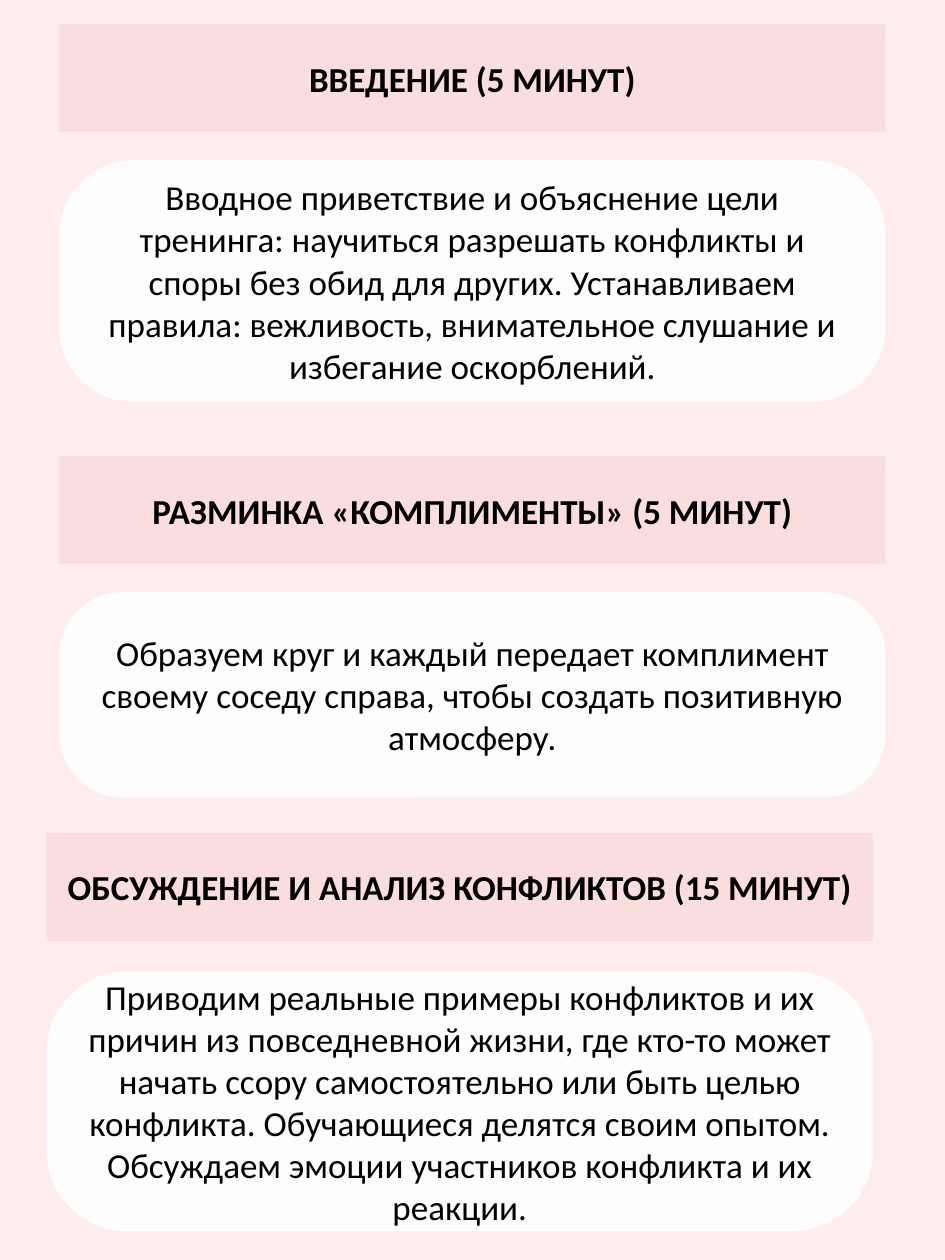
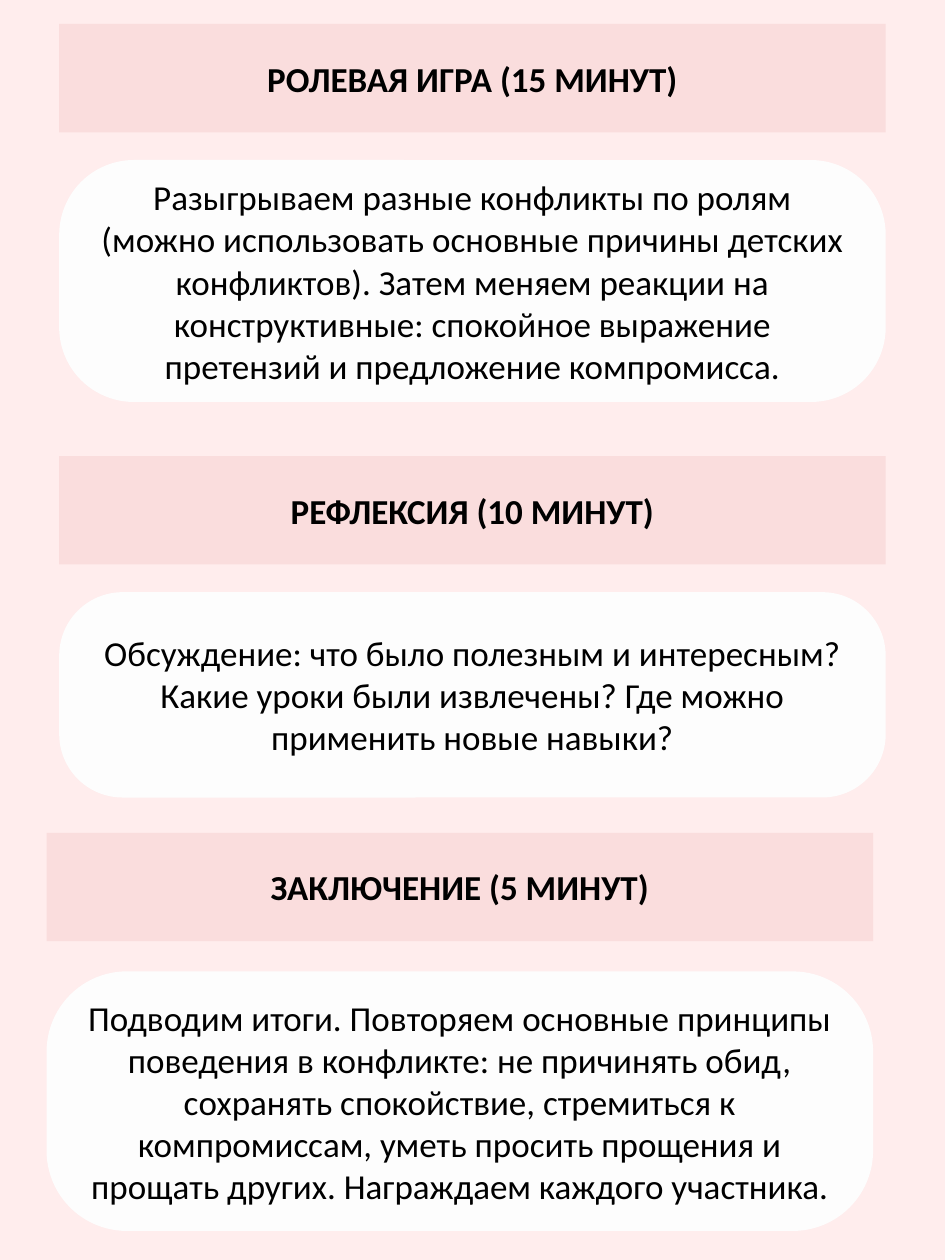
from dataclasses import dataclass

from pptx import Presentation
from pptx.dml.color import RGBColor as RGB
from pptx.enum.shapes import MSO_SHAPE as SHAPE
from pptx.enum.text import MSO_ANCHOR as ANCHOR, PP_ALIGN as ALIGN
from pptx.oxml.ns import qn
from pptx.util import Inches, Pt


@dataclass(frozen=True)
class Theme:
    page: str = "FF9F9F"
    page_alpha: int = 18
    band: str = "E18B8B"
    band_alpha: int = 16
    card: str = "FDFDFD"
    text: str = "000000"
    font: str = "Calibri"
    size: int = 20
    card_radius: float = 0.309


THEME = Theme()

# Layout shared by both slides, in inches
WIDTH, BAND_HEIGHT = 6.56, 0.86
# One stage per row: left, band top, card top, card height
STAGE_SLOTS = [
    (0.47, 0.19, 1.27, 1.92),
    (0.47, 3.62, 4.70, 1.63),
    (0.37, 6.61, 7.71, 2.06),
]

# Stages of the training: heading and description
SLIDES = [
    [
        ("ВВЕДЕНИЕ (5 МИНУТ)",
         "Вводное приветствие и объяснение цели тренинга: научиться разрешать "
         "конфликты и споры без обид для других. Устанавливаем правила: "
         "вежливость, внимательное слушание и избегание оскорблений."),
        ("РАЗМИНКА «КОМПЛИМЕНТЫ» (5 МИНУТ)",
         "Образуем круг и каждый передает комплимент своему соседу справа, "
         "чтобы создать позитивную атмосферу."),
        ("ОБСУЖДЕНИЕ И АНАЛИЗ КОНФЛИКТОВ (15 МИНУТ)",
         "Приводим реальные примеры конфликтов и их причин из повседневной "
         "жизни, где кто-то может начать ссору самостоятельно или быть целью "
         "конфликта. Обучающиеся делятся своим опытом. Обсуждаем эмоции "
         "участников конфликта и их реакции."),
    ],
    [
        ("РОЛЕВАЯ ИГРА (15 МИНУТ)",
         "Разыгрываем разные конфликты по ролям (можно использовать основные "
         "причины детских конфликтов). Затем меняем реакции на конструктивные: "
         "спокойное выражение претензий и предложение компромисса."),
        ("РЕФЛЕКСИЯ (10 МИНУТ)",
         "Обсуждение: что было полезным и интересным? Какие уроки были "
         "извлечены? Где можно применить новые навыки?"),
        ("ЗАКЛЮЧЕНИЕ (5 МИНУТ)",
         "Подводим итоги. Повторяем основные принципы поведения в конфликте: "
         "не причинять обид, сохранять спокойствие, стремиться к компромиссам, "
         "уметь просить прощения и прощать других. Награждаем каждого "
         "участника."),
    ],
]


def set_fill(fill, owner, color, alpha=100):
    """Fill with a solid colour; alpha is the opacity in percent."""
    fill.solid()
    fill.fore_color.rgb = RGB.from_string(color)
    if alpha < 100:
        clr = next(owner.iter(qn("a:srgbClr")))
        clr.makeelement(qn("a:alpha"))
        node = clr.makeelement(qn("a:alpha"), {"val": str(alpha * 1000)})
        clr.append(node)


def add_panel(s, box, text, color, alpha=100, radius=0, bold=False):
    """Add a borderless panel with centred text."""
    sp = s.shapes.add_shape(SHAPE.ROUNDED_RECTANGLE, *map(Inches, box))
    sp.adjustments[0] = radius
    sp.shadow.inherit = False
    sp.line.fill.background()
    set_fill(sp.fill, sp.element, color, alpha)

    tf = sp.text_frame
    tf.word_wrap = True
    tf.vertical_anchor = ANCHOR.MIDDLE
    p = tf.paragraphs[0]
    p.alignment = ALIGN.CENTER
    r = p.add_run()
    r.text = text
    font_format = {"name": THEME.font, "size": Pt(THEME.size), "bold": bold}
    for name, value in font_format.items():
        setattr(r.font, name, value)
    r.font.color.rgb = RGB.from_string(THEME.text)


def add_stage(s, slot, heading, description):
    """Add a heading band and the description card below it."""
    left, band_top, card_top, card_height = slot
    add_panel(s, (left, band_top, WIDTH, BAND_HEIGHT), heading,
              THEME.band, alpha=THEME.band_alpha, bold=True)
    add_panel(s, (left, card_top, WIDTH, card_height), description,
              THEME.card, radius=THEME.card_radius)


def add_slide(prs, stages):
    """Add a tinted slide with one stage per slot."""
    s = prs.slides.add_slide(prs.slide_layouts[6])
    set_fill(s.background.fill, s.element, THEME.page, THEME.page_alpha)
    for slot, (heading, description) in zip(STAGE_SLOTS, stages):
        add_stage(s, slot, heading, description)


def main():
    prs = Presentation()
    prs.slide_width, prs.slide_height = Inches(7.5), Inches(10)
    for stages in SLIDES:
        add_slide(prs, stages)
    prs.save("out.pptx")


if __name__ == "__main__":
    main()
